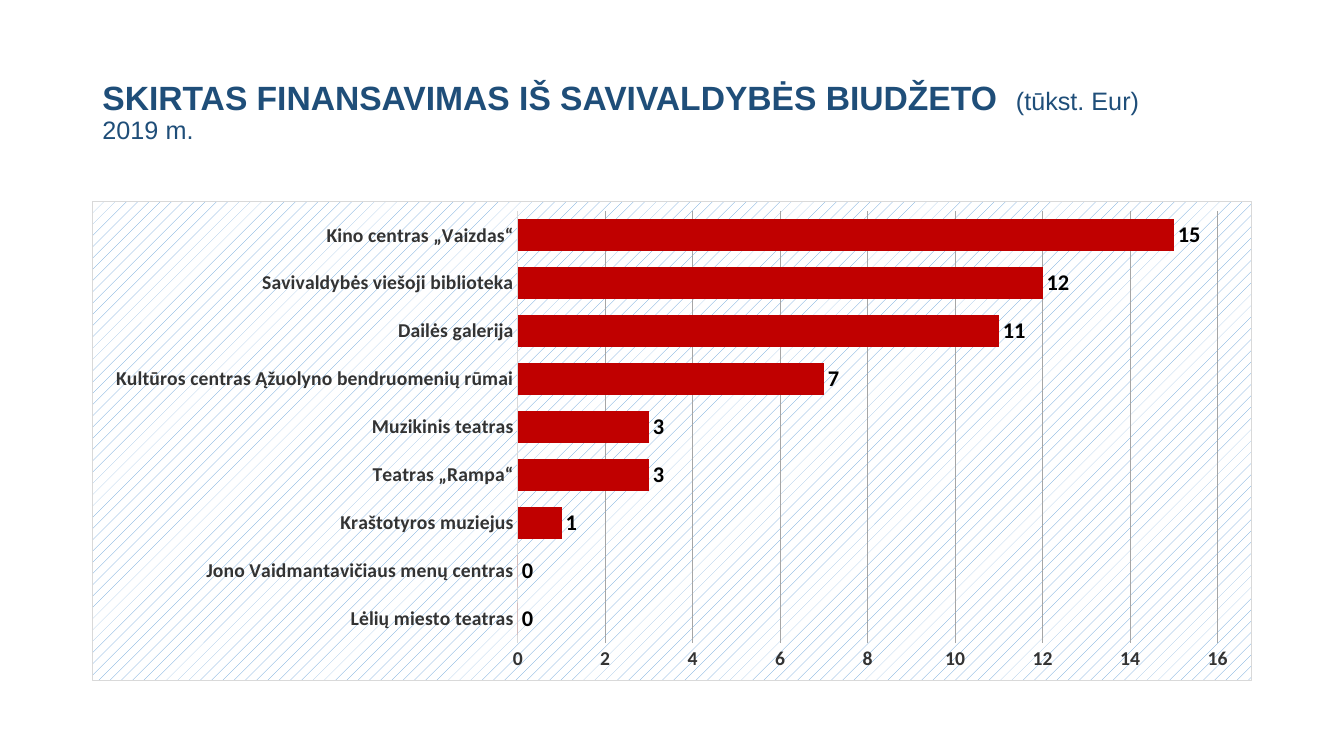
from lxml import etree
from pptx import Presentation
from pptx.chart.data import CategoryChartData
from pptx.dml.color import RGBColor
from pptx.enum.chart import XL_CHART_TYPE as ChartType, XL_LABEL_POSITION as LabelPos, XL_TICK_MARK as Tick
from pptx.enum.text import MSO_ANCHOR as Anchor, PP_ALIGN as Align
from pptx.oxml import parse_xml
from pptx.util import Pt

NAVY, RED, BLACK, DARK = "1F4E79", "C00000", "000000", "333333"
GRID, BORDER, HATCH, WHITE = "A6A6A6", "D9D9D9", "5B9BD5", "FFFFFF"

FUNDING = [
    ("Lėlių miesto teatras", 0),
    ("Jono Vaidmantavičiaus menų centras", 0),
    ("Kraštotyros muziejus", 1),
    ("Teatras „Rampa“", 3),
    ("Muzikinis teatras", 3),
    ("Kultūros centras Ąžuolyno bendruomenių rūmai", 7),
    ("Dailės galerija", 11),
    ("Savivaldybės viešoji biblioteka", 12),
    ("Kino centras „Vaizdas“", 15),
]


def color(hex_code):
    return RGBColor.from_string(hex_code)


class BudgetSlide:
    title_font = "Arial"
    chart_font = "Calibri"

    def __init__(self, deck):
        self.slide = deck.slides.add_slide(deck.slide_layouts[5])

    def style(self, font, name, size, hex_code, bold=None):
        font.name, font.bold = name, bold
        font.color.rgb = color(hex_code)
        if size:
            font.size = Pt(size)

    def title(self, box, lines):
        heading = self.slide.shapes.title
        heading.left, heading.top, heading.width, heading.height = map(Pt, box)
        frame = heading.text_frame
        frame.word_wrap = True
        frame.vertical_anchor = Anchor.MIDDLE
        paragraph = frame.paragraphs[0]
        paragraph.alignment = Align.LEFT
        paragraph.line_spacing = 0.9
        self.style(paragraph.font, self.title_font, None, NAVY)
        for index, pieces in enumerate(lines):
            if index:
                paragraph.add_line_break()
            for text, size, bold in pieces:
                run = paragraph.add_run()
                run.text = text
                run.font.size, run.font.bold = Pt(size), bold

    def bar_chart(self, box, rows, top_value, step):
        data = CategoryChartData(number_format="0")
        data.categories = [name for name, amount in rows]
        data.add_series("Series 1", [amount for name, amount in rows])
        chart = self.slide.shapes.add_chart(ChartType.BAR_CLUSTERED, *map(Pt, box), data).chart
        chart.has_legend = chart.has_title = False
        self.style(chart.font, self.chart_font, 10, BLACK)
        self.hatch_background(chart)

        plot = chart.plots[0]
        plot.gap_width = 50
        plot.vary_by_categories = False
        bars = plot.series[0]
        bars.format.fill.solid()
        bars.format.fill.fore_color.rgb = color(RED)
        labels = bars.data_labels
        labels.show_value = True
        labels.position = LabelPos.OUTSIDE_END
        labels.number_format, labels.number_format_is_linked = "0", False
        self.style(labels.font, self.chart_font, 16, BLACK, True)

        names, amounts = chart.category_axis, chart.value_axis
        for axis in (names, amounts):
            axis.major_tick_mark = axis.minor_tick_mark = Tick.NONE
            self.style(axis.tick_labels.font, self.chart_font, 14, DARK, True)
        self.line(names.format.line, BORDER)
        amounts.format.line.fill.background()
        amounts.minimum_scale, amounts.maximum_scale, amounts.major_unit = 0, top_value, step
        amounts.tick_labels.number_format = "0"
        amounts.tick_labels.number_format_is_linked = False
        amounts.has_major_gridlines = True
        self.line(amounts.major_gridlines.format.line, GRID)

    def line(self, line, hex_code):
        line.color.rgb = color(hex_code)
        line.width = Pt(0.75)

    def hatch_background(self, chart):
        properties = parse_xml(
            '<c:spPr xmlns:c="http://schemas.openxmlformats.org/drawingml/2006/chart"'
            ' xmlns:a="http://schemas.openxmlformats.org/drawingml/2006/main">'
            f'<a:pattFill prst="pct10"><a:fgClr><a:srgbClr val="{HATCH}"/></a:fgClr>'
            f'<a:bgClr><a:srgbClr val="{WHITE}"/></a:bgClr></a:pattFill>'
            f'<a:ln w="{Pt(0.75)}"><a:solidFill><a:srgbClr val="{BORDER}"/></a:solidFill></a:ln>'
            '</c:spPr>'
        )
        chart_space = chart.element
        chart_tag = etree.QName(properties.nsmap["c"], "chart")
        chart_space.find(chart_tag.text).addnext(properties)


def main():
    deck = Presentation()
    deck.slide_width, deck.slide_height = Pt(960), Pt(540)
    budget = BudgetSlide(deck)
    budget.title((66, 28.75, 828, 104.4), [
        [("SKIRTAS FINANSAVIMAS IŠ SAVIVALDYBĖS BIUDŽETO  ", 24, True), ("(tūkst. Eur)", 18, False)],
        [("2019 m.", 18, False)],
    ])
    budget.bar_chart((66, 143.75, 828, 342.6), FUNDING, top_value=16, step=2)
    deck.save("out.pptx")


if __name__ == "__main__":
    main()
